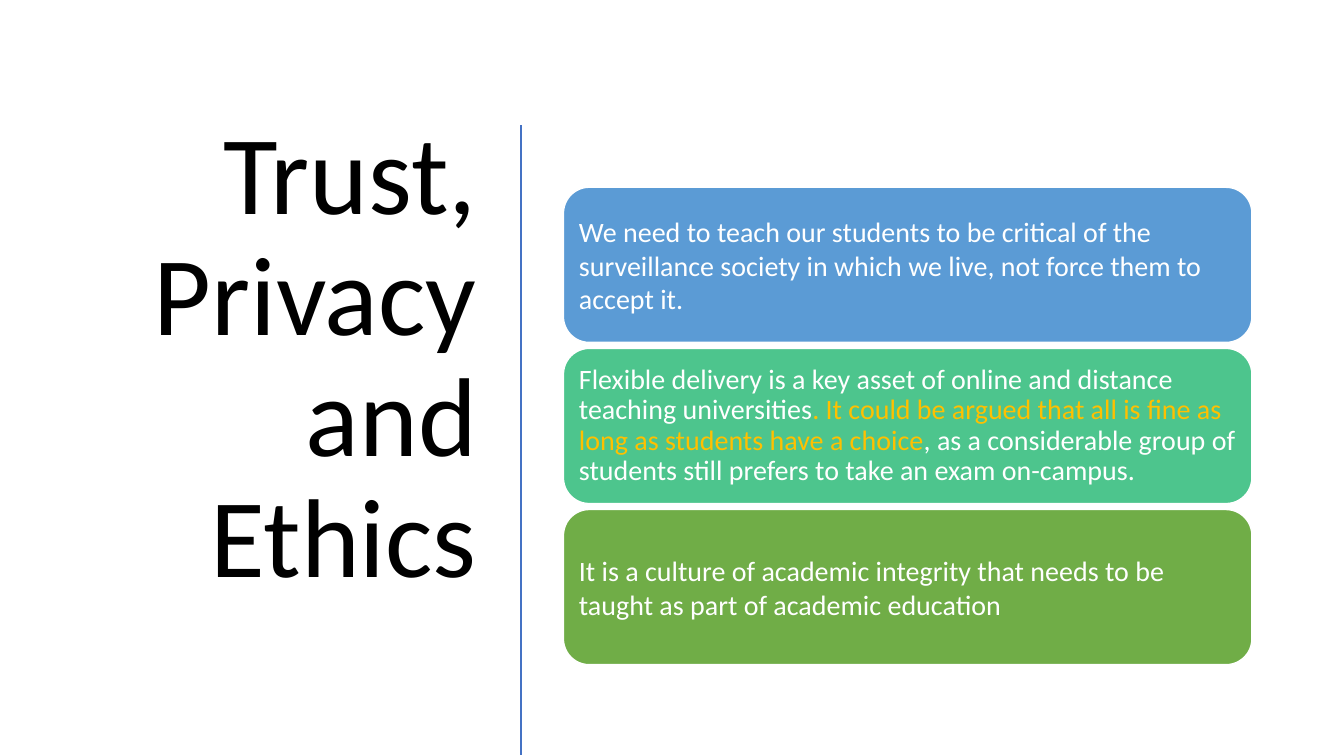
from dataclasses import dataclass

from lxml.etree import SubElement
from pptx import Presentation
from pptx.dml.color import RGBColor
from pptx.enum.shapes import MSO_CONNECTOR, MSO_SHAPE
from pptx.enum.text import MSO_ANCHOR, MSO_AUTO_SIZE, PP_ALIGN
from pptx.oxml.ns import qn
from pptx.slide import Slide
from pptx.text.text import TextFrame
from pptx.util import Cm, Pt

BLACK = RGBColor(0x00, 0x00, 0x00)
WHITE = RGBColor(0xFF, 0xFF, 0xFF)
GOLD = RGBColor(0xFF, 0xC0, 0x00)
LINE_BLUE = RGBColor(0x44, 0x72, 0xC4)
BLUE = RGBColor(0x5B, 0x9B, 0xD5)
TEAL = RGBColor(0x4D, 0xC5, 0x8D)
GREEN = RGBColor(0x70, 0xAD, 0x47)

CARD_LEFT, CARD_TOP = 14.2, 4.72
CARD_WIDTH, CARD_HEIGHT, CARD_PITCH = 17.35, 3.91, 4.06


@dataclass(frozen=True)
class Span:
    text: str
    color: RGBColor = WHITE


@dataclass(frozen=True)
class Card:
    fill: RGBColor
    spans: tuple[Span, ...]
    line_spacing: float = 1.0


CARDS = (
    Card(BLUE, (
        Span("We need to teach our students to be critical of the surveillance "
             "society in which we live, not force them to accept it."),
    )),
    Card(TEAL, (
        Span("Flexible delivery is a key asset of online and distance teaching universities"),
        Span(". It could be argued that all is fine as long as students have a choice", GOLD),
        Span(", as a considerable group of students still prefers to take an exam on-campus."),
    ), line_spacing=0.9),
    Card(GREEN, (
        Span("It is a culture of academic integrity that needs to be taught "
             "as part of academic education"),
    )),
)


def write_text(tf: TextFrame, *spans: Span, size: float, align: PP_ALIGN,
               anchor: MSO_ANCHOR, line_spacing: float, inset: float, top: float) -> None:
    """Fill the frame with one paragraph; the insets are in centimetres."""
    tf.word_wrap = True
    tf.auto_size = MSO_AUTO_SIZE.NONE
    tf.vertical_anchor = anchor
    tf.margin_left = tf.margin_right = Cm(inset)
    tf.margin_top = tf.margin_bottom = Cm(top)
    p = tf.paragraphs[0]
    p.alignment = align
    p.line_spacing = line_spacing
    for span in spans:
        r = p.add_run()
        r.text = span.text
        r.font.name = "Calibri"
        r.font.size = Pt(size)
        r.font.color.rgb = span.color


def add_title(s: Slide) -> None:
    title = s.shapes.title
    title.left, title.top = Cm(1.32), Cm(2.97)
    title.width, title.height = Cm(10.95), Cm(15.52)
    write_text(title.text_frame, Span("Trust, Privacy and Ethics", BLACK), size=80,
               align=PP_ALIGN.RIGHT, anchor=MSO_ANCHOR.TOP, line_spacing=0.9,
               inset=0.25, top=0)


def add_divider(s: Slide) -> None:
    line = s.shapes.add_connector(MSO_CONNECTOR.STRAIGHT,
                                  Cm(13.13), Cm(3.15), Cm(13.13), Cm(19.03))
    line.line.color.rgb = LINE_BLUE
    line.line.width = Pt(2)
    SubElement(line._element.spPr, qn("a:effectLst"))


def add_card(s: Slide, card: Card, top: float) -> None:
    sp = s.shapes.add_shape(MSO_SHAPE.ROUNDED_RECTANGLE, Cm(CARD_LEFT), Cm(top),
                            Cm(CARD_WIDTH), Cm(CARD_HEIGHT))
    sp.shadow.inherit = False
    sp.fill.solid()
    sp.fill.fore_color.rgb = card.fill
    sp.line.color.rgb = WHITE
    sp.line.width = Pt(1)
    # The rounded corners already inset the text by 0.19 cm.
    write_text(sp.text_frame, *card.spans, size=20, align=PP_ALIGN.LEFT,
               anchor=MSO_ANCHOR.MIDDLE, line_spacing=card.line_spacing,
               inset=0.2, top=0.2)


def main() -> None:
    prs = Presentation()
    prs.slide_width, prs.slide_height = Cm(33.87), Cm(19.05)
    s = prs.slides.add_slide(prs.slide_layouts.get_by_name("Title Only"))
    add_title(s)
    add_divider(s)
    for i, card in enumerate(CARDS):
        add_card(s, card, CARD_TOP + i * CARD_PITCH)
    prs.save("out.pptx")


if __name__ == "__main__":
    main()
